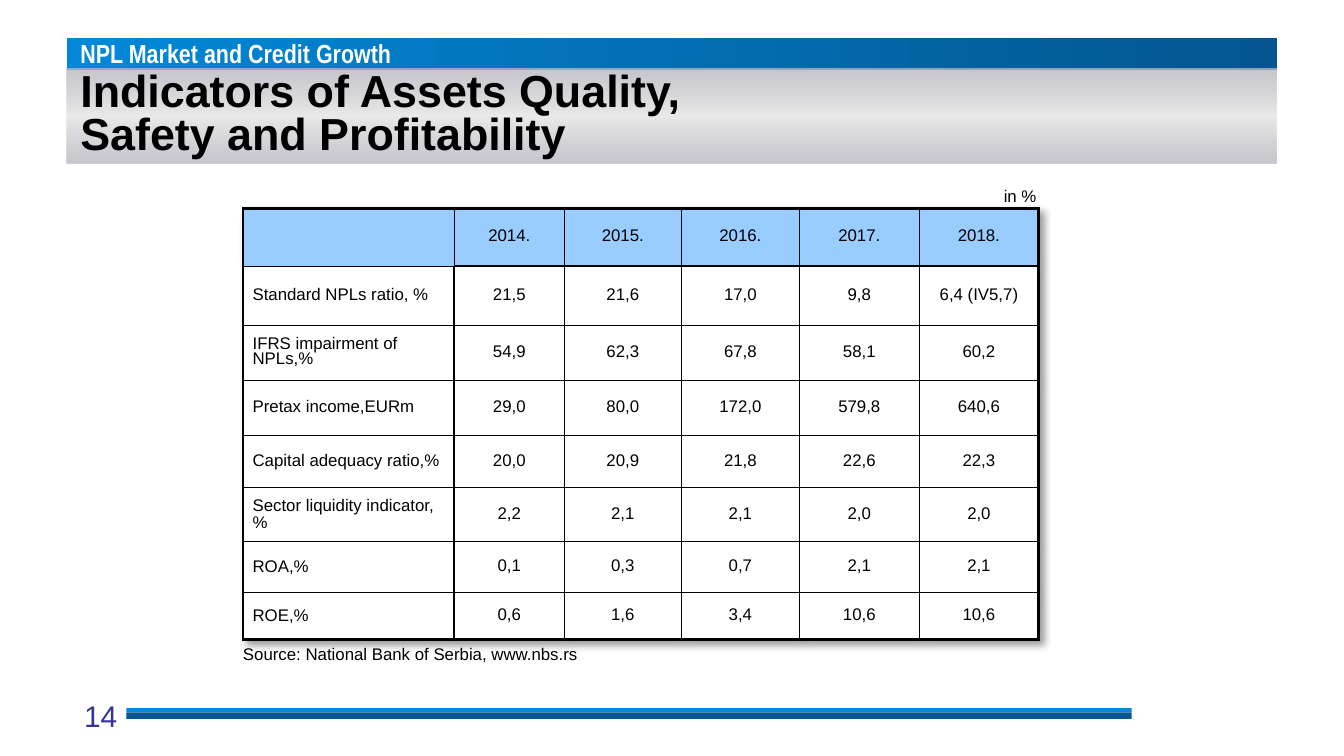
from lxml.etree import SubElement
from pptx import Presentation
from pptx.dml.color import RGBColor
from pptx.enum.shapes import MSO_SHAPE
from pptx.enum.text import MSO_ANCHOR, PP_ALIGN
from pptx.oxml.ns import qn
from pptx.util import Inches, Pt

BLACK, WHITE = "000000", "FFFFFF"
LIGHT_BLUE, DARK_BLUE = "0388D7", "035690"
SILVER, PALE = "B9B7C0", "EAEAEA"
COLUMN_WIDTHS = [1.57, 0.82, 0.87, 0.88, 0.89, 0.89]
ROW_HEIGHTS = [0.43, 0.44, 0.41, 0.41, 0.39, 0.4, 0.38, 0.35]
INDICATORS = [
    ["", "2014.", "2015.", "2016.", "2017.", "2018."],
    ["Standard NPLs ratio, %", "21,5", "21,6", "17,0", "9,8", "6,4 (IV5,7)"],
    ["IFRS impairment of NPLs,%", "54,9", "62,3", "67,8", "58,1", "60,2"],
    ["Pretax income,EURm", "29,0", "80,0", "172,0", "579,8", "640,6"],
    ["Capital adequacy ratio,%", "20,0", "20,9", "21,8", "22,6", "22,3"],
    ["Sector liquidity indicator,%", "2,2", "2,1", "2,1", "2,0", "2,0"],
    ["ROA,%", "0,1", "0,3", "0,7", "2,1", "2,1"],
    ["ROE,%", "0,6", "1,6", "3,4", "10,6", "10,6"],
]
WIDE_SPACED_ROWS = (1, 5, 6, 7)


def color(value):
    return RGBColor.from_string(value)


def add_element(parent, tag, **attributes):
    return SubElement(parent, qn(tag), attributes)


def write(frame, text, size, font="Arial", fill=BLACK, bold=False,
          align=PP_ALIGN.LEFT, spacing=None):
    para = frame.paragraphs[0]
    para.text = text
    para.alignment = align
    para.line_spacing = spacing
    para.font.name = font
    para.font.size = Pt(size)
    para.font.bold = bold
    para.font.color.rgb = color(fill)


def add_bar(page, left, top, width, height, fill=None):
    bar = page.shapes.add_shape(MSO_SHAPE.RECTANGLE, Inches(left), Inches(top),
                                Inches(width), Inches(height))
    bar.shadow.inherit = False
    bar.line.fill.background()
    if fill:
        bar.fill.solid()
        bar.fill.fore_color.rgb = color(fill)
    return bar


def fill_gradient(bar, stops, angle):
    bar.fill.gradient()
    bar.fill.gradient_angle = angle
    stop_list = next(bar.element.iter(qn("a:gsLst")))
    for stop in list(stop_list):
        stop_list.remove(stop)
    for position, value, opacity in stops:
        stop = add_element(stop_list, "a:gs", pos=str(position * 1000))
        tint = add_element(stop, "a:srgbClr", val=value)
        if opacity < 100:
            add_element(tint, "a:alpha", val=str(opacity * 1000))


def add_label(page, left, top, width, height, text, size, wrap=True,
              anchor=MSO_ANCHOR.MIDDLE, **style):
    box = page.shapes.add_textbox(Inches(left), Inches(top),
                                  Inches(width), Inches(height))
    box.text_frame.word_wrap = wrap
    box.text_frame.vertical_anchor = anchor
    write(box.text_frame, text, size, **style)


def add_headings(page):
    section = add_bar(page, 0.5, 0.28, 9, 0.24)
    fill_gradient(section, [(0, LIGHT_BLUE, 100), (100, DARK_BLUE, 100)], 0)
    section.text_frame.margin_top = 0
    section.text_frame.vertical_anchor = MSO_ANCHOR.TOP
    write(section.text_frame, "NPL Market and Credit Growth", 14,
          font="Arial Narrow", fill=WHITE, bold=True)

    title = add_bar(page, 0.5, 0.51, 9, 0.71)
    fill_gradient(title, [(0, SILVER, 79), (50, PALE, 100), (100, SILVER, 79)], 270)
    title.text_frame.vertical_anchor = MSO_ANCHOR.MIDDLE
    write(title.text_frame, "Indicators of Assets Quality,\vSafety and Profitability",
          24, bold=True, spacing=0.8)


def add_borders(cell, row, column):
    last_row, last_column = len(ROW_HEIGHTS) - 1, len(COLUMN_WIDTHS) - 1
    thick = {
        "a:lnL": column == 0 or (column == 1 and row > 0),
        "a:lnR": column == last_column or (column == 0 and row > 0),
        "a:lnT": row == 0 or (row == 1 and column > 0),
        "a:lnB": row == last_row or (row == 0 and column > 0),
    }
    properties = cell._tc.get_or_add_tcPr()
    for tag, is_thick in thick.items():
        line = add_element(properties, tag, w=str(Pt(1.5 if is_thick else 0.5)))
        add_element(add_element(line, "a:solidFill"), "a:srgbClr", val=BLACK)


def fill_cell(cell, text, row, column):
    add_borders(cell, row, column)
    cell.fill.solid()
    cell.fill.fore_color.rgb = color("99CCFF" if row == 0 else WHITE)
    cell.vertical_anchor = MSO_ANCHOR.MIDDLE
    cell.margin_left = cell.margin_right = Inches(0.07)
    cell.margin_top = cell.margin_bottom = 0
    wide = column == 0 and row in WIDE_SPACED_ROWS
    write(cell.text_frame, text, 9, spacing=0.9 if wide else 0.8,
          align=PP_ALIGN.CENTER if column else PP_ALIGN.LEFT)


def add_table_shadow(table):
    effects = add_element(table._tbl.tblPr, "a:effectLst")
    shadow = add_element(effects, "a:outerShdw", blurRad=str(Pt(4)), dist=str(Pt(3)),
                         dir="2700000", algn="tl", rotWithShape="0")
    tint = add_element(shadow, "a:srgbClr", val=BLACK)
    add_element(tint, "a:alpha", val="40000")


def add_indicator_table(page):
    table = page.shapes.add_table(
        len(ROW_HEIGHTS), len(COLUMN_WIDTHS), Inches(1.81), Inches(1.55),
        Inches(sum(COLUMN_WIDTHS)), Inches(sum(ROW_HEIGHTS))).table
    table.first_row = table.horz_banding = False
    for column, width in zip(table.columns, COLUMN_WIDTHS):
        column.width = Inches(width)
    for row, height in zip(table.rows, ROW_HEIGHTS):
        row.height = Inches(height)
    for row, texts in enumerate(INDICATORS):
        for column, text in enumerate(texts):
            fill_cell(table.cell(row, column), text, row, column)
    add_table_shadow(table)


def main():
    deck = Presentation()
    deck.slide_width = Inches(10)
    deck.slide_height = deck.slide_width * 9 // 16
    page = deck.slides.add_slide(deck.slide_layouts[6])
    add_bar(page, 0.94, 5.3, 7.48, 0.05, DARK_BLUE)
    add_bar(page, 0.94, 5.27, 7.48, 0.03, LIGHT_BLUE)
    add_headings(page)
    add_label(page, 0.43, 5.14, 0.64, 0.33, "14", 16, fill="333399",
              anchor=MSO_ANCHOR.TOP, align=PP_ALIGN.CENTER)
    add_label(page, 1.71, 4.74, 6.46, 0.25,
              "Source: National Bank of Serbia, www.nbs.rs", 9)
    add_label(page, 7.37, 1.33, 0.45, 0.25, "in %", 9, wrap=False)
    add_indicator_table(page)
    deck.save("out.pptx")


if __name__ == "__main__":
    main()
